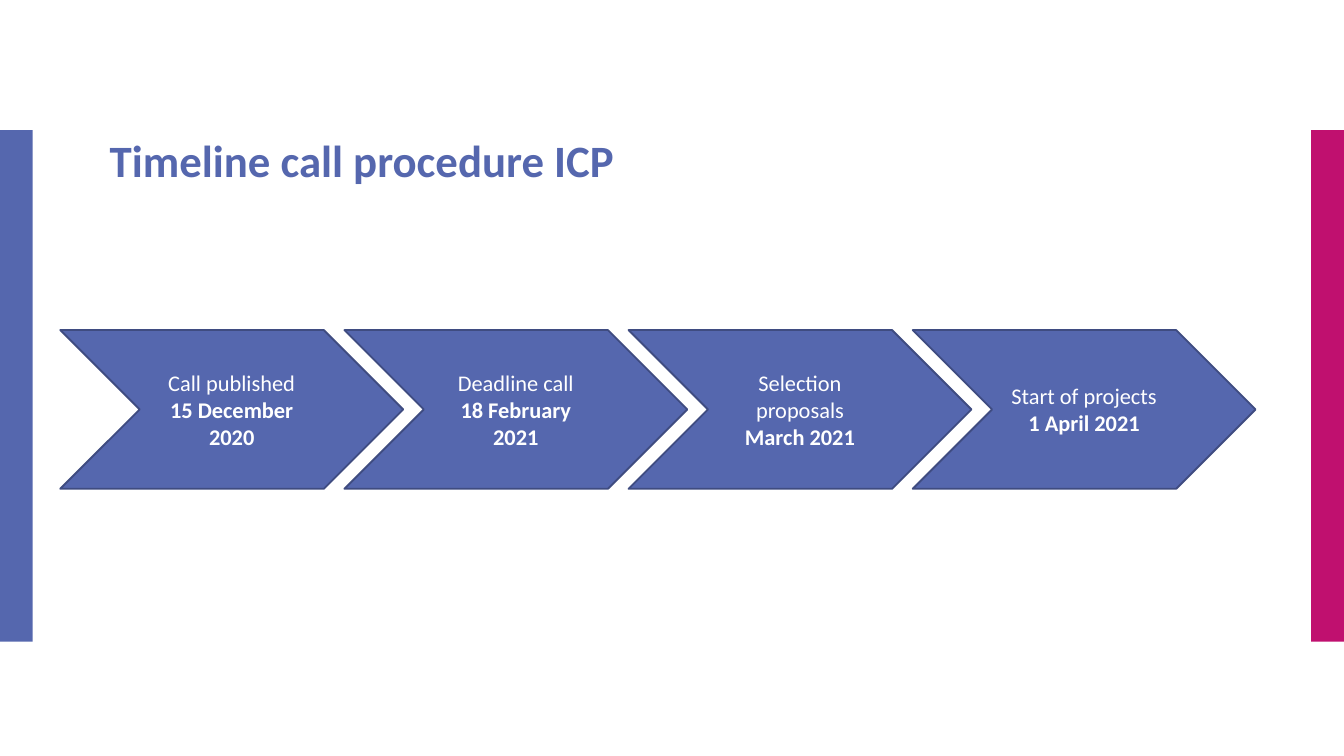
from dataclasses import dataclass

from pptx import Presentation
from pptx.dml.color import RGBColor
from pptx.enum.shapes import MSO_SHAPE
from pptx.enum.text import MSO_ANCHOR, MSO_AUTO_SIZE, PP_ALIGN
from pptx.util import Cm, Pt


@dataclass(frozen=True)
class Theme:
    blue: RGBColor = RGBColor(0x55, 0x67, 0xAE)
    edge: RGBColor = RGBColor(0x3F, 0x4C, 0x81)
    pink: RGBColor = RGBColor(0xC0, 0x10, 0x6F)
    white: RGBColor = RGBColor(0xFF, 0xFF, 0xFF)
    font: str = "Calibri"
    head: Pt = Pt(24)
    lead: Pt = Pt(24.4)
    body: Pt = Pt(12)


THEME = Theme()
WIDTH, HEIGHT = Cm(25.4), Cm(14.29)
STEPS = [
    ("Call published", "15 December 2020"),
    ("Deadline call", "18 February 2021"),
    ("Selection proposals", "March 2021"),
    ("Start of projects", "1 April 2021"),
]


def style(font, size, color, bold):
    font.name = THEME.font
    font.size = size
    font.color.rgb = color
    font.bold = bold


def add_solid(slide, kind, box, fill):
    shape = slide.shapes.add_shape(kind, *box)
    shape.shadow.inherit = False
    shape.fill.solid()
    shape.fill.fore_color.rgb = fill
    shape.line.fill.background()
    return shape


def add_bars(slide, box):
    """Put a colour bar at each side of the box."""
    left, top, width, height = box
    bar = Cm(0.62)
    for x, color in ((left, THEME.blue), (left + width - bar, THEME.pink)):
        add_solid(slide, MSO_SHAPE.RECTANGLE, (x, top, bar, height), color)


def set_title(slide, text, box):
    title = slide.shapes.title
    title.left, title.top, title.width, title.height = box
    frame = title.text_frame
    frame.text = text
    frame.auto_size = MSO_AUTO_SIZE.NONE
    frame.vertical_anchor = MSO_ANCHOR.TOP
    line = frame.paragraphs[0]
    line.alignment = PP_ALIGN.LEFT
    line.line_spacing = THEME.lead
    style(line.font, THEME.head, THEME.blue, True)


def add_step(slide, label, date, box):
    step = add_solid(slide, MSO_SHAPE.CHEVRON, box, THEME.blue)
    step.line.color.rgb = THEME.edge
    step.line.width = Pt(1)
    frame = step.text_frame
    frame.word_wrap = True
    frame.vertical_anchor = MSO_ANCHOR.MIDDLE
    frame.text = f"{label}\n{date}"
    for line, bold in zip(frame.paragraphs, (False, True)):
        line.alignment = PP_ALIGN.CENTER
        style(line.font, THEME.body, THEME.white, bold)


def add_chain(slide, steps, box):
    """Spread overlapping chevrons evenly across the box."""
    left, top, width, height = box
    size = Cm(6.48)
    pitch = (width - size) // (len(steps) - 1)
    for i, (label, date) in enumerate(steps):
        add_step(slide, label, date, (left + i * pitch, top, size, height))


def main():
    deck = Presentation()
    deck.slide_width, deck.slide_height = WIDTH, HEIGHT
    slide = deck.slides.add_slide(deck.slide_layouts.get_by_name("Title Only"))
    add_bars(slide, (0, Cm(2.46), WIDTH, Cm(9.67)))
    set_title(slide, "Timeline call procedure ICP",
              (Cm(1.82), Cm(2.54), Cm(22.35), Cm(1.98)))
    add_chain(slide, STEPS, (Cm(1.14), Cm(6.24), Cm(22.59), Cm(3)))
    deck.save("out.pptx")


if __name__ == "__main__":
    main()
